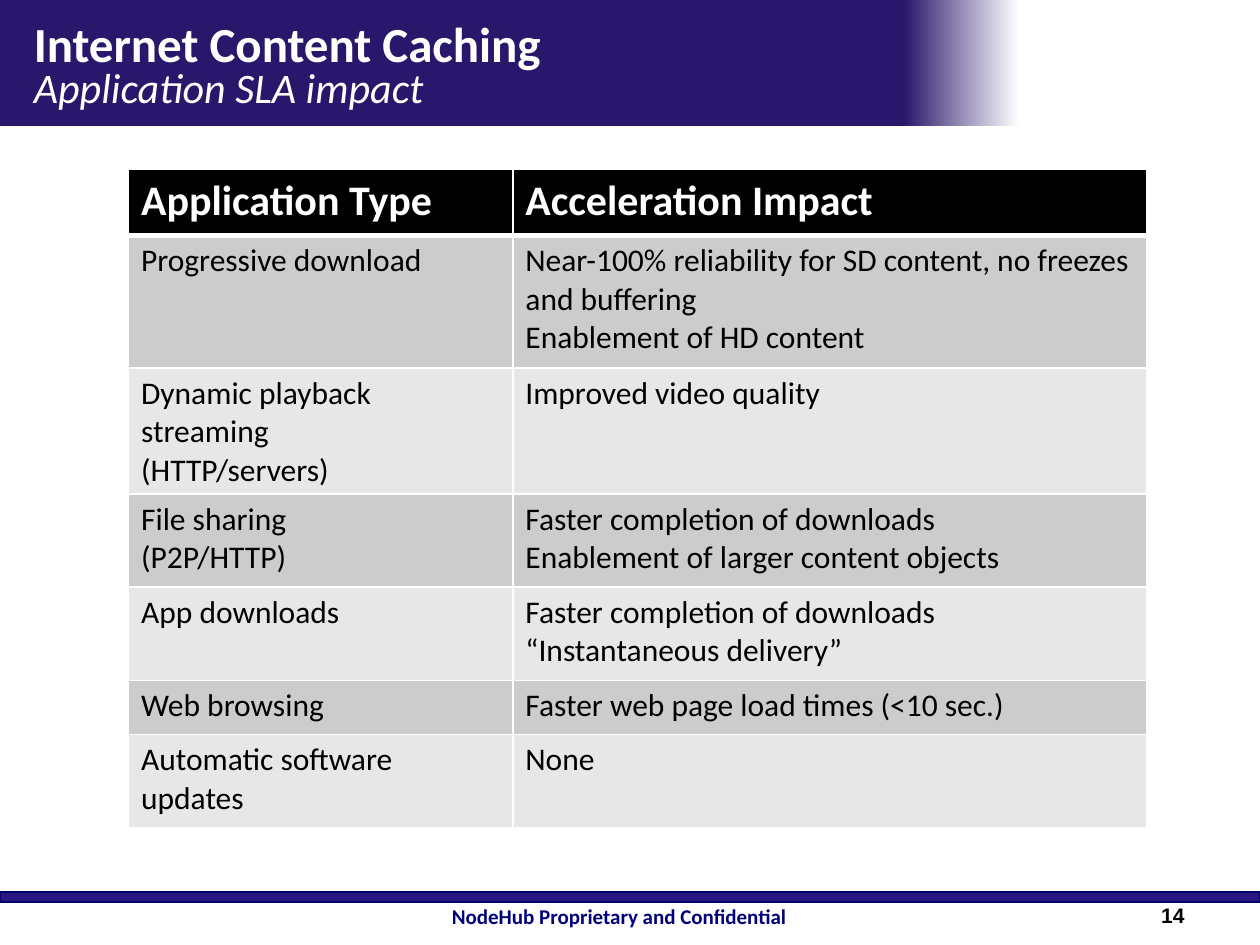
from lxml.etree import SubElement as Sub
from pptx import Presentation
from pptx.dml.color import RGBColor as RGB
from pptx.enum.shapes import MSO_SHAPE as Shape
from pptx.enum.text import MSO_ANCHOR as Anchor, PP_ALIGN as Align
from pptx.oxml.ns import qn
from pptx.util import Inches, Pt

ROWS = [
    (["Application Type"], ["Acceleration Impact"]),
    (["Progressive download"],
     ["Near-100% reliability for SD content, no freezes and buffering",
      "Enablement of HD content"]),
    (["Dynamic playback streaming", "(HTTP/servers)"],
     ["Improved video quality"]),
    (["File sharing", "(P2P/HTTP)"],
     ["Faster completion of downloads",
      "Enablement of larger content objects"]),
    (["App downloads"],
     ["Faster completion of downloads", "“Instantaneous delivery”"]),
    (["Web browsing"], ["Faster web page load times (<10 sec.)"]),
    (["Automatic software updates"], ["None"]),
]
WIDTHS = [3.05, 5.03]
HEIGHTS = [0.53, 1.05, 0.74, 0.74, 0.74, 0.43, 0.74]


def color(code):
    """Turn a hex string into a colour."""
    return RGB.from_string(code)


class Deck:
    """Hold the text style and the current slide."""

    style = dict(name="Calibri", size=Pt(18), bold=False, italic=False)

    def __init__(self, slide):
        """Keep the slide to draw on."""
        self.slide = slide

    def font(self, font, code, **extra):
        """Apply the base style with changes to a font."""
        for key, value in {**self.style, **extra}.items():
            setattr(font, key, value)
        font.color.rgb = color(code)

    def bar(self, box, fill, fade=None, edge=None):
        """Draw a rectangle, plain or fading to the right."""
        shape = self.slide.shapes.add_shape(Shape.RECTANGLE, *map(Inches, box))
        shape.shadow.inherit = False
        if fade:
            shape.fill.gradient()
            shape.fill.gradient_angle = 0
            for stop, code in zip(shape.fill.gradient_stops, (fill, fade)):
                stop.color.rgb = color(code)
        else:
            shape.fill.solid()
            shape.fill.fore_color.rgb = color(fill)
        if edge:
            shape.line.color.rgb = color(edge)
            shape.line.width = Pt(1.5)
        else:
            shape.line.fill.background()

    def text(self, box, lines, code, anchor=Anchor.BOTTOM, align=Align.LEFT,
             space=1.0):
        """Write one paragraph of (words, format) lines."""
        frame = self.slide.shapes.add_textbox(*map(Inches, box)).text_frame
        frame.word_wrap = True
        frame.vertical_anchor = anchor
        para = frame.paragraphs[0]
        para.alignment = align
        para.line_spacing = space
        for index, (words, form) in enumerate(lines):
            if index:
                para.add_line_break()
            run = para.add_run()
            run.text = words
            self.font(run.font, code, **form)

    def border(self, cell, widths):
        """Set white cell borders from a dict of side widths."""
        props = cell._tc.get_or_add_tcPr()
        for index, (side, width) in enumerate(widths.items()):
            line = Sub(props, qn(f"a:ln{side}"), w=str(Pt(width)))
            Sub(Sub(line, qn("a:solidFill")), qn("a:srgbClr"), val="FFFFFF")
            props.insert(index, line)

    def cell(self, cell, lines, row):
        """Fill, frame and write one table cell."""
        head = row == 0
        cell.fill.solid()
        fill = "000000" if head else "CCCCCC" if row % 2 else "E7E7E7"
        cell.fill.fore_color.rgb = color(fill)
        self.border(cell, dict(L=1, R=1, T=3 if row == 1 else 1,
                               B=3 if head else 1))
        cell.text = "\n".join(lines)
        form = dict(size=Pt(24), bold=True) if head else {}
        for para in cell.text_frame.paragraphs:
            for run in para.runs:
                self.font(run.font, "FFFFFF" if head else "000000", **form)

    def table(self, left, top, rows, widths, heights):
        """Draw the table from its rows and sizes."""
        size = map(Inches, (left, top, sum(widths), sum(heights)))
        grid = self.slide.shapes.add_table(len(rows), len(widths), *size).table
        for col, width in zip(grid.columns, widths):
            col.width = Inches(width)
        for row, height in zip(grid.rows, heights):
            row.height = Inches(height)
        for y, row in enumerate(rows):
            for x, lines in enumerate(row):
                self.cell(grid.cell(y, x), lines, y)


def main():
    """Build and save the slide."""
    prs = Presentation()
    prs.slide_width, prs.slide_height = Inches(10), Inches(7.5)
    deck = Deck(prs.slides.add_slide(prs.slide_layouts[6]))
    deck.bar((7.17, 0, 0.92, 1), "29176B", fade="FFFFFF")
    deck.bar((0, 0, 7.18, 1), "29176B")
    deck.bar((0, 7.08, 10, 0.08), "29177F", edge="000066")
    deck.text((0.17, 0.25, 7.5, 0.58),
              [("Internet Content Caching", dict(size=Pt(28), bold=True)),
               ("Application SLA impact", dict(size=Pt(24), italic=True))],
              "FFFFFF", Anchor.MIDDLE, space=0.8)
    small = dict(size=Pt(12), bold=True)
    deck.text((8.5, 7.08, 1, 0.33), [("14", {**small, "name": "Arial"})],
              "000000", align=Align.RIGHT)
    deck.text((3, 6.92, 3.83, 0.5),
              [("NodeHub Proprietary and Confidential", small)],
              "00007D", align=Align.CENTER)
    deck.table(1.02, 1.34, ROWS, WIDTHS, HEIGHTS)
    prs.save("out.pptx")


if __name__ == "__main__":
    main()
